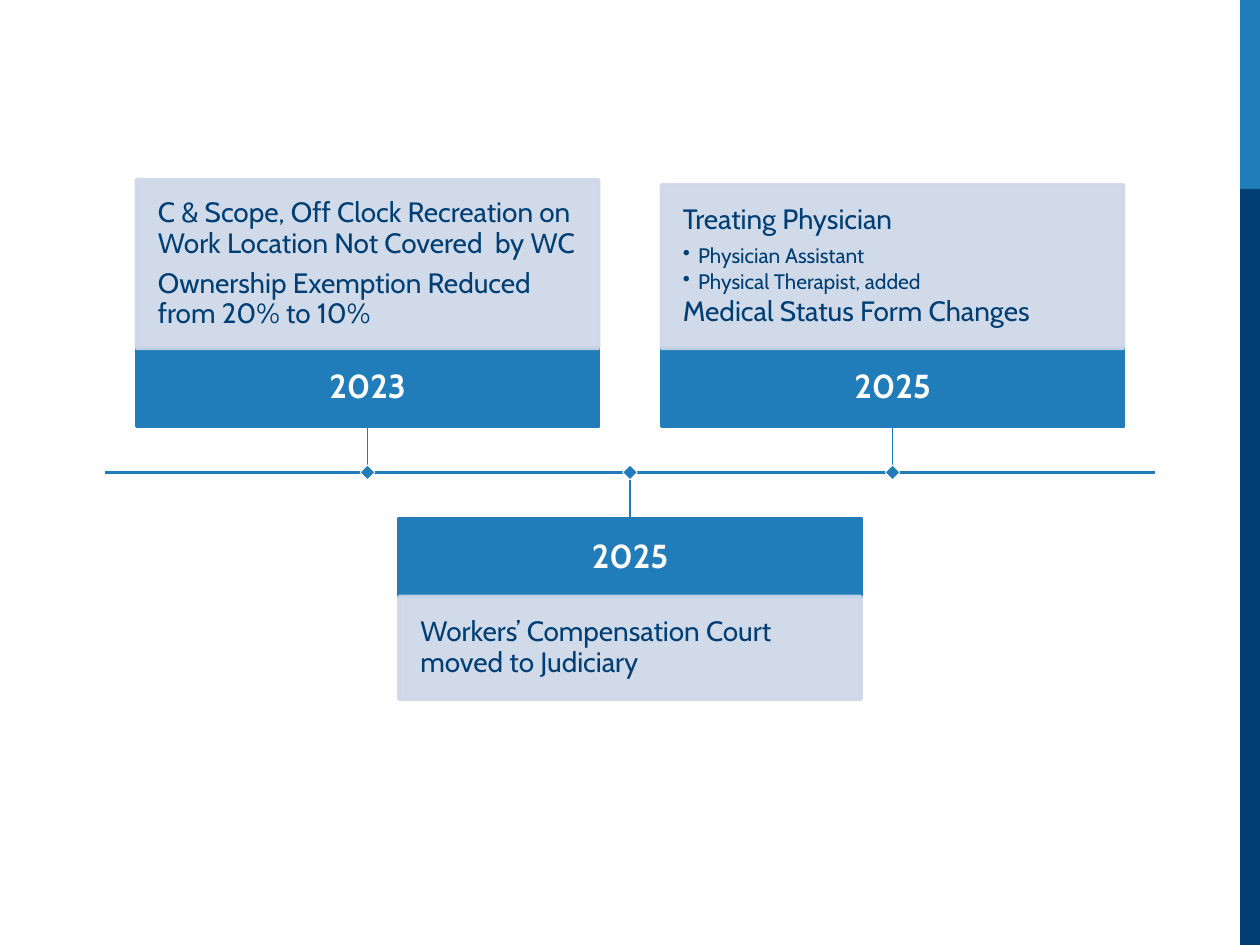
from lxml.etree import SubElement
from pptx import Presentation
from pptx.dml.color import RGBColor
from pptx.enum.shapes import MSO_CONNECTOR as Connector, MSO_SHAPE as Shape
from pptx.enum.text import MSO_ANCHOR as Anchor, PP_ALIGN as Align
from pptx.oxml.ns import qn
from pptx.util import Inches, Pt

BLUE, NAVY, PALE, WHITE = "217CBA", "003E74", "CDD7E7", "FFFFFF"
CARD_WIDTH, YEAR_HEIGHT, STEM, AXIS_ROW = 44, 7.45, 4.38, 45
MILESTONES = [
    (35, "2023", 16.05, True, [
        ("C & Scope, Off Clock Recreation on Work Location Not Covered  by WC", False),
        ("Ownership Exemption Reduced from 20% to 10%", False)]),
    (60, "2025", 9.75, False, [
        ("Workers’ Compensation Court moved to Judiciary", False)]),
    (85, "2025", 15.55, True, [
        ("Treating Physician", False),
        ("Physician Assistant", True),
        ("Physical Therapist, added", True),
        ("Medical Status Form Changes", False)]),
]


def paint(color_format, color):
    color_format.rgb = RGBColor.from_string(color)


class TimelineSlide:
    """Draws timeline elements on a grid of 120 columns by 90 rows."""

    font_name = "Cabin"

    def __init__(self, presentation):
        self.slide = presentation.slides.add_slide(presentation.slide_layouts[6])
        self.column = presentation.slide_width / 120
        self.row = presentation.slide_height / 90

    def place(self, column, row):
        return round(column * self.column), round(row * self.row)

    def box(self, left, top, width, height, fill, line=None, line_width=2.25, opacity=100):
        shape = self.slide.shapes.add_shape(
            Shape.RECTANGLE, *self.place(left, top), *self.place(width, height))
        shape.shadow.inherit = False
        shape.fill.solid()
        paint(shape.fill.fore_color, fill)
        if line:
            paint(shape.line.color, line)
            shape.line.width = Pt(line_width)
        else:
            shape.line.fill.background()
        if opacity < 100:
            for color in shape._element.spPr.iter(qn("a:srgbClr")):
                SubElement(color, qn("a:alpha"), val=str(opacity * 1000))
        return shape

    def line(self, start, end, width):
        connector = self.slide.shapes.add_connector(
            Connector.STRAIGHT, *self.place(*start), *self.place(*end))
        paint(connector.line.color, BLUE)
        connector.line.width = Pt(width)
        SubElement(connector._element.spPr, qn("a:effectLst"))

    def label(self, shape, items, inset, color, size, align=Align.LEFT, bold=False):
        frame = shape.text_frame
        frame.word_wrap = True
        frame.vertical_anchor = Anchor.MIDDLE
        frame.margin_left = frame.margin_right = Inches(inset)
        frame.margin_top = frame.margin_bottom = Inches(inset)
        for index, (text, bulleted) in enumerate(items):
            paragraph = frame.add_paragraph() if index else frame.paragraphs[0]
            paragraph.text = text
            paragraph.alignment = align
            paragraph.line_spacing = 0.9
            text_size = 12 if bulleted else size
            paragraph.space_after = Pt(text_size * (0.15 if bulleted else 0.35))
            if bulleted:
                self.bullet(paragraph)
            font = paragraph.font
            font.name, font.size, font.bold = self.font_name, Pt(text_size), bold
            paint(font.color, color)

    def bullet(self, paragraph):
        properties = paragraph._p.get_or_add_pPr()
        indent = Inches(0.12)
        properties.set("marL", str(indent))
        properties.set("indent", str(-indent))
        SubElement(properties, qn("a:buChar"), char="•")

    def card(self, center, year, detail_height, above, items):
        left = center - CARD_WIDTH / 2
        if above:
            stem_end = AXIS_ROW - STEM
            year_top = stem_end - YEAR_HEIGHT
            detail_top = year_top - detail_height
        else:
            stem_end = year_top = AXIS_ROW + STEM
            detail_top = year_top + YEAR_HEIGHT
        header = self.box(left, year_top, CARD_WIDTH, YEAR_HEIGHT, BLUE, BLUE)
        self.label(header, [(year, False)], 0.11, WHITE, 19, Align.CENTER, True)
        detail = self.box(left, detail_top, CARD_WIDTH, detail_height, PALE, PALE, opacity=90)
        self.label(detail, items, 0.17, NAVY, 16)
        self.line((center, stem_end), (center, AXIS_ROW), 1)
        marker = self.box(center - 0.5, AXIS_ROW - 0.5, 1, 1, BLUE, WHITE, 0.5)
        marker.rotation = 45


def main():
    presentation = Presentation()
    presentation.slide_width, presentation.slide_height = Inches(10), Inches(7.5)
    timeline = TimelineSlide(presentation)
    timeline.box(118.1, 0, 1.9, 18, BLUE)
    timeline.box(118.1, 18, 1.9, 72, NAVY)
    timeline.line((10, AXIS_ROW), (110, AXIS_ROW), 2.25)
    for milestone in MILESTONES:
        timeline.card(*milestone)
    presentation.save("out.pptx")


if __name__ == "__main__":
    main()
